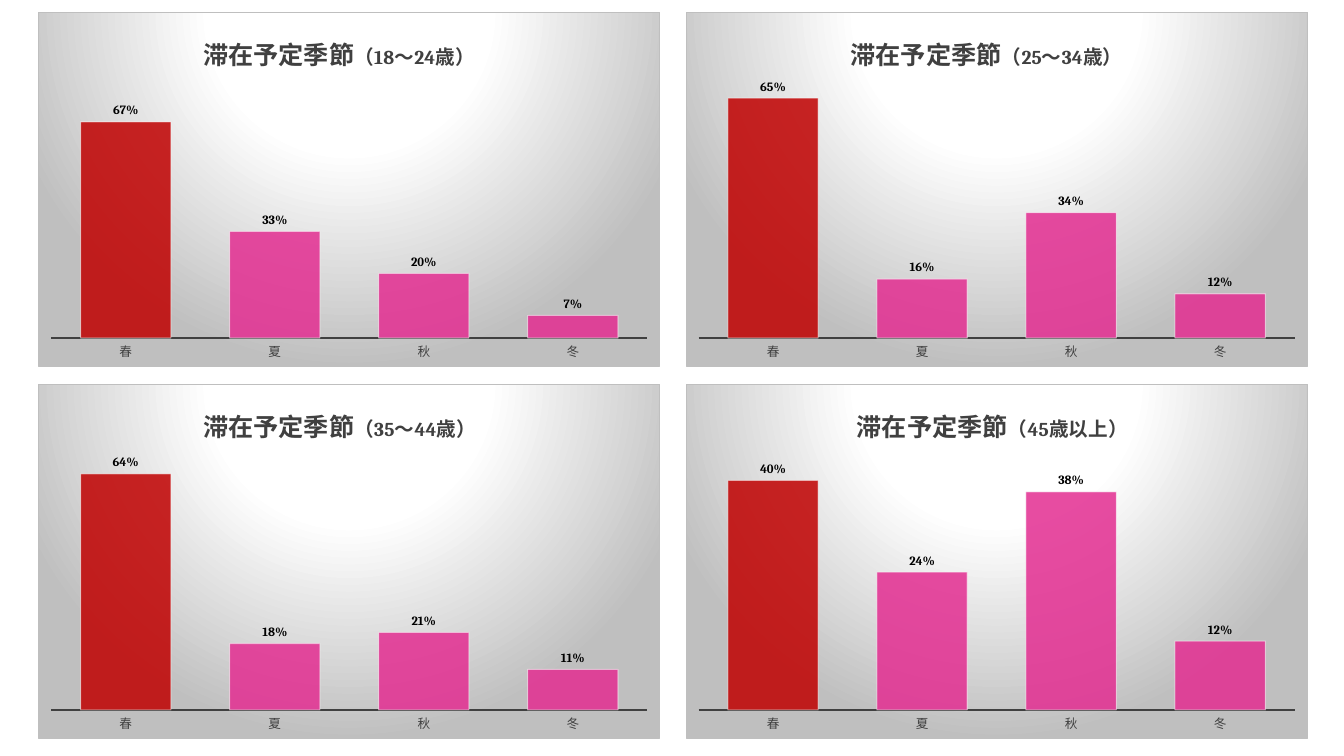
"""Build a slide of four column charts of planned seasons of stay by age group."""
import lxml.etree
import pptx
import pptx.chart.data
import pptx.dml.color
import pptx.enum.chart
import pptx.oxml
import pptx.oxml.ns
import pptx.util

Inches, Pt = pptx.util.Inches, pptx.util.Pt
RGBColor = pptx.dml.color.RGBColor
qn = pptx.oxml.ns.qn

BLACK = RGBColor(0x00, 0x00, 0x00)
WHITE = RGBColor(0xFF, 0xFF, 0xFF)
DARK = RGBColor(0x40, 0x40, 0x40)
GRAY = RGBColor(0xBF, 0xBF, 0xBF)
PINK = RGBColor(0xE3, 0x2D, 0x91)
RED = RGBColor(0xC0, 0x00, 0x00)

FONT = "Cambria"
SEASONS = ["春", "夏", "秋", "冬"]
HEADING = "滞在予定季節"
AGE_GROUPS = [
    ("（18～24歳）", [0.67, 0.33, 0.2, 0.07], 0.8, 0.26),
    ("（25～34歳）", [0.65, 0.16, 0.34, 0.12], 0.7, 0.26),
    ("（35～44歳）", [0.64, 0.18, 0.21, 0.11], 0.7, 0.26),
    ("（45歳以上）", [0.4, 0.24, 0.38, 0.12], 0.45, 0.27),
]
LEFT, TOP, WIDTH, HEIGHT = 0.38, 0.12, 6.17, 3.52
STEP_X, STEP_Y = 6.42, 3.69

BACKDROP = f"""<c:spPr {pptx.oxml.ns.nsdecls("c", "a")}>
<a:gradFill rotWithShape="1"><a:gsLst>
<a:gs pos="0"><a:srgbClr val="{WHITE}"/></a:gs>
<a:gs pos="39000"><a:srgbClr val="{WHITE}"/></a:gs>
<a:gs pos="100000"><a:srgbClr val="{GRAY}"/></a:gs>
</a:gsLst><a:path path="circle">
<a:fillToRect l="50000" t="-80000" r="50000" b="180000"/></a:path></a:gradFill>
<a:ln w="9525"><a:solidFill><a:srgbClr val="{GRAY}"/></a:solidFill></a:ln>
</c:spPr>"""


def assign(target, **values):
    """Set several attributes of one object."""
    for name, value in values.items():
        setattr(target, name, value)


def style_font(font, size, color, bold=False):
    """Give a font its face, size, weight and colour."""
    assign(font, name=FONT, size=Pt(size), bold=bold)
    font.color.rgb = color


def paint(fill, color, percent):
    """Fill with one colour at a given opacity."""
    fill.solid()
    fill.fore_color.rgb = color
    color_node = fill.fore_color._xFill.find(qn("a:srgbClr"))
    lxml.etree.SubElement(color_node, qn("a:alpha"), val=str(percent * 1000))


def place(parent, index, **settings):
    """Give a chart part a manual layout."""
    for old in parent.findall(qn("c:layout")):
        parent.remove(old)
    layout = lxml.etree.Element(qn("c:layout"))
    manual = lxml.etree.SubElement(layout, qn("c:manualLayout"))
    for name, value in settings.items():
        lxml.etree.SubElement(manual, qn(f"c:{name}"), val=str(value))
    parent.insert(index, layout)


def add_title(chart, ages, left):
    """Write the heading with a smaller age range."""
    chart.has_title = True
    para = chart.chart_title.text_frame.paragraphs[0]
    for text, size in ((HEADING, 18), (ages, 14)):
        span = para.add_run()
        span.text = text
        style_font(span.font, size, DARK, True)
    place(chart.chart_title._element, 1, xMode="edge", yMode="edge", x=left, y=0.05)


def style_axes(chart, top_value):
    """Show the season axis only and fix the value scale."""
    seasons, shares = chart.category_axis, chart.value_axis
    none = pptx.enum.chart.XL_TICK_MARK.NONE
    assign(seasons, major_tick_mark=none, minor_tick_mark=none)
    style_font(seasons.tick_labels.font, 9, DARK)
    seasons.format.line.width = Pt(1.5)
    seasons.format.line.color.rgb = DARK
    assign(shares, minimum_scale=0, maximum_scale=top_value,
           has_major_gridlines=False, visible=False)


def style_columns(plot):
    """Colour the columns, with spring in red, and label them."""
    assign(plot, gap_width=65, vary_by_categories=False, has_data_labels=True)
    series = plot.series[0]
    for part, color in ((series, PINK), (series.points[0], RED)):
        paint(part.format.fill, color, 85)
        part.format.line.width = Pt(0.75)
        paint(part.format.line.fill, WHITE, 50)
    labels = plot.data_labels
    assign(labels, show_value=True, number_format="0%", number_format_is_linked=False,
           position=pptx.enum.chart.XL_LABEL_POSITION.OUTSIDE_END)
    style_font(labels.font, 9, BLACK, True)


def add_season_chart(page, left, top, ages, values, top_value, title_left):
    """Add one age group's column chart."""
    data = pptx.chart.data.CategoryChartData(number_format="0%")
    data.categories = SEASONS
    data.add_series("Series 1", values)
    chart = page.shapes.add_chart(
        pptx.enum.chart.XL_CHART_TYPE.COLUMN_CLUSTERED,
        Inches(left), Inches(top), Inches(WIDTH), Inches(HEIGHT), data).chart
    chart.has_legend = False
    style_font(chart.font, 10, BLACK)
    add_title(chart, ages, title_left)
    style_axes(chart, top_value)
    style_columns(chart.plots[0])
    body = chart._chartSpace.find(qn("c:chart"))
    place(body.find(qn("c:plotArea")), 0, layoutTarget="inner", xMode="edge",
          yMode="edge", x=0.02, y=0.19, w=0.96, h=0.73)
    body.addnext(pptx.oxml.parse_xml(BACKDROP))


def main():
    """Build and save the deck."""
    deck = pptx.Presentation()
    assign(deck, slide_width=Inches(13.33), slide_height=Inches(7.5))
    page = deck.slides.add_slide(deck.slide_layouts[6])
    for index, group in enumerate(AGE_GROUPS):
        row, column = divmod(index, 2)
        add_season_chart(page, LEFT + column * STEP_X, TOP + row * STEP_Y, *group)
    deck.save("out.pptx")


if __name__ == "__main__":
    main()
